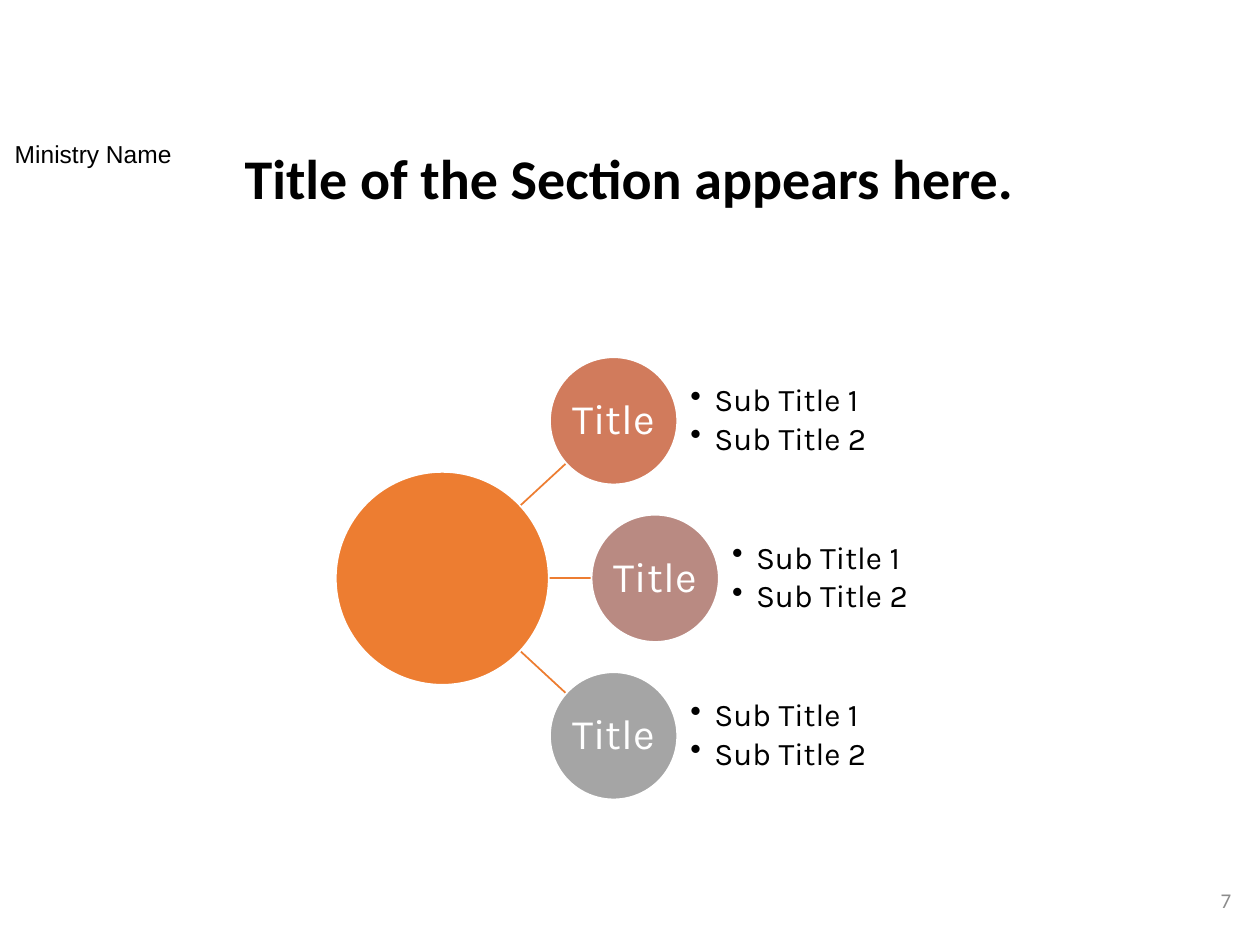
"""Build a section slide with a hub and three branches of sub titles."""
import pptx
import pptx.dml.color
import pptx.enum.shapes
import pptx.enum.text
import pptx.oxml.ns
import pptx.util
import lxml.etree

Inches = pptx.util.Inches
Align = pptx.enum.text.PP_ALIGN
Anchor = pptx.enum.text.MSO_ANCHOR
HUES = {"hub": "ED7D31", "top": "D17B5C", "mid": "B98A82", "low": "A5A5A5",
        "white": "FFFFFF", "black": "000000", "gray": "8C8C8C"}


class Deck:
    def __init__(self):
        self.show = pptx.Presentation()
        self.show.slide_width, self.show.slide_height = Inches(10), Inches(7.5)
        self.slide = self.show.slides.add_slide(self.show.slide_layouts[5])

    def hue(self, name):
        return pptx.dml.color.RGBColor.from_string(HUES[name])

    def frame(self, shape, inset=(0.1, 0.05), anchor=Anchor.TOP):
        frame = shape.text_frame
        frame.word_wrap = True
        frame.auto_size = pptx.enum.text.MSO_AUTO_SIZE.NONE
        frame.vertical_anchor = anchor
        frame.margin_left = frame.margin_right = Inches(inset[0])
        frame.margin_top = frame.margin_bottom = Inches(inset[1])
        return frame

    def add_text(self, para, text, size, font, hue="black", align=Align.CENTER, bold=False):
        para.alignment = align
        para.line_spacing = 0.9
        run = para.add_run()
        run.text = text
        run.font.size = pptx.util.Pt(size)
        run.font.name = font
        run.font.bold = bold
        run.font.color.rgb = self.hue(hue)

    def title(self, text, box):
        shape = self.slide.shapes.title
        shape.left, shape.top, shape.width, shape.height = map(Inches, box)
        self.add_text(self.frame(shape).paragraphs[0], text, 32, "Calibri", bold=True)

    def label(self, text, box, size, font, inset=(0.1, 0.05), anchor=Anchor.TOP, **look):
        shape = self.slide.shapes.add_textbox(*map(Inches, box))
        frame = self.frame(shape, inset, anchor)
        self.add_text(frame.paragraphs[0], text, size, font, **look)

    def list(self, items, box):
        shape = self.slide.shapes.add_textbox(*map(Inches, box))
        frame = self.frame(shape, (0, 0), Anchor.MIDDLE)
        for i, item in enumerate(items):
            para = frame.add_paragraph() if i else frame.paragraphs[0]
            para.space_after = pptx.util.Pt(2.7)
            props = para._p.get_or_add_pPr()
            props.set("marL", str(Inches(0.19)))
            props.set("indent", str(-Inches(0.19)))
            mark = lxml.etree.SubElement(props, pptx.oxml.ns.qn("a:buChar"))
            mark.set("char", "•")
            self.add_text(para, item, 18, "Karla", align=Align.LEFT)

    def disc(self, x, y, size, hue):
        kind = pptx.enum.shapes.MSO_SHAPE.OVAL
        box = (x - size / 2, y - size / 2, size, size)
        shape = self.slide.shapes.add_shape(kind, *map(Inches, box))
        shape.shadow.inherit = False
        shape.fill.solid()
        shape.fill.fore_color.rgb = self.hue(hue)
        shape.line.color.rgb = self.hue("white")
        shape.line.width = pptx.util.Pt(1)

    def link(self, *ends):
        kind = pptx.enum.shapes.MSO_CONNECTOR.STRAIGHT
        line = self.slide.shapes.add_connector(kind, *map(Inches, ends))
        line.line.color.rgb = self.hue("hub")
        line.line.width = pptx.util.Pt(1)
        lxml.etree.SubElement(line._element.spPr, pptx.oxml.ns.qn("a:effectLst"))


def main():
    deck = Deck()
    deck.title("Title of the Section appears here.", (1.65, 1.15, 6.69, 0.79))
    deck.label("Ministry Name", (0, 1.08, 1.48, 0.65), 14, "Arial")
    mid, step, size, core = 4.59, 1.25, 1.01, 0.72
    for side, end in ((-1, 4.49), (0, 4.7), (1, 4.49)):
        deck.link(4.1, mid + side * 0.55, end, mid + side * 0.91)
    deck.disc(3.51, mid, 1.69, "hub")
    for side, x, hue in ((-1, 4.87, "top"), (0, 5.2, "mid"), (1, 4.87, "low")):
        y = mid + side * step
        deck.disc(x, y, size, hue)
        deck.label("Title", (x - core / 2, y - core / 2, core, core), 24, "Karla",
                   (0.02, 0.02), Anchor.MIDDLE, hue="white")
        deck.list(("Sub Title 1", "Sub Title 2"), (x + 0.61, y - size / 2, 1.52, size))
    deck.label("7", (7.62, 6.96, 2.25, 0.4), 12, "Calibri", anchor=Anchor.MIDDLE,
               hue="gray", align=Align.RIGHT)
    deck.show.save("out.pptx")


if __name__ == "__main__":
    main()
